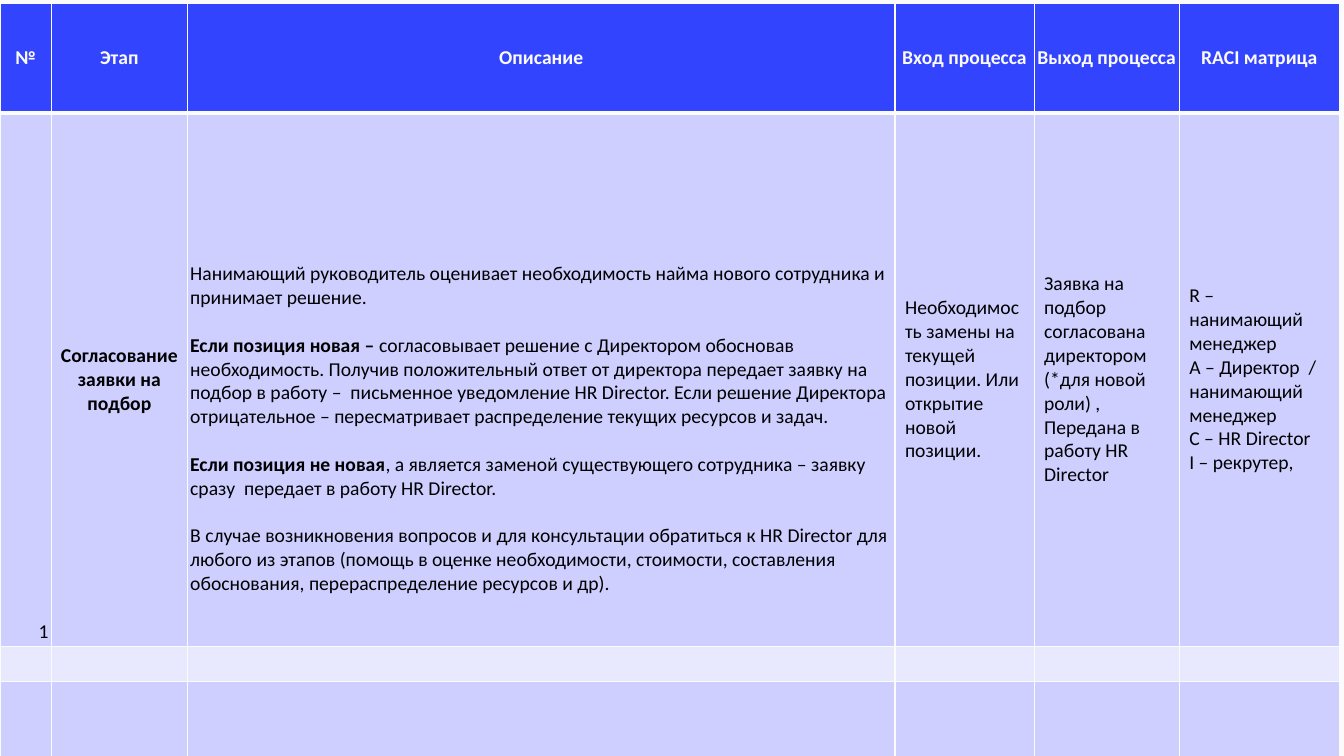
from dataclasses import dataclass

from lxml import etree
from pptx import Presentation
from pptx.dml.color import RGBColor
from pptx.enum.text import MSO_ANCHOR, PP_ALIGN
from pptx.oxml.ns import qn
from pptx.util import Pt

LEFT, CENTER, RIGHT = PP_ALIGN.LEFT, PP_ALIGN.CENTER, PP_ALIGN.RIGHT
MIDDLE, BOTTOM = MSO_ANCHOR.MIDDLE, MSO_ANCHOR.BOTTOM


@dataclass
class Theme:
    paper: str = "FBFBFB"
    ink: str = "000000"
    header: str = "3344FF"
    band: str = "CECFFF"
    light_band: str = "E8E9FF"
    font: str = "Calibri"
    size: float = 14
    thin: float = 1
    thick: float = 3


# Cell insets: left, top, right, bottom
WIDE = (7.2, 3.6, 7.2, 3.6)
TIGHT = (2, 1.5, 2, 1.5)
RAISED = (2, 1.5, 2, 36)

COLUMNS = (36.7, 97.2, 505.4, 99.4, 103.7, 114.5)
ROWS = (78.5, 380.9, 25.2, 53.3)

HEADINGS = ("№", "Этап", "Описание", "Вход процесса", "Выход процесса", "RACI матрица")

# Each paragraph is a list of (text, bold) runs
DESCRIPTION = [
    [("Нанимающий руководитель оценивает необходимость найма нового сотрудника "
      "и принимает решение.", False)],
    [("Если позиция новая – ", True),
     ("согласовывает решение с Директором обосновав необходимость. Получив "
      "положительный ответ от директора передает заявку на подбор в работу –  "
      "письменное уведомление HR Director. Если решение Директора отрицательное – "
      "пересматривает распределение текущих ресурсов и задач.", False)],
    [("Если позиция не новая", True),
     (", а является заменой существующего сотрудника – заявку сразу  передает "
      "в работу HR Director.", False)],
    [("В случае возникновения вопросов и для консультации обратиться к HR Director "
      "для любого из этапов (помощь в оценке необходимости, стоимости, составления "
      "обоснования, перераспределение ресурсов и др).", False)],
]


def plain(*lines, bold=False):
    return [[(line, bold)] for line in lines]


STAGE = (
    (plain("1"), dict(align=RIGHT, anchor=BOTTOM)),
    (plain("Согласование заявки на подбор", bold=True), dict(align=CENTER)),
    (DESCRIPTION, dict(anchor=BOTTOM, insets=RAISED, gap=17)),
    (plain("Необходимость замены на текущей позиции. Или открытие новой позиции."),
     dict(insets=WIDE)),
    (plain("Заявка на подбор согласована директором (*для новой роли) ,",
           "Передана в работу HR Director"), dict(insets=WIDE)),
    (plain("R – нанимающий менеджер", "A – Директор  / нанимающий менеджер",
           "C – HR Director", "I – рекрутер,"), dict(insets=WIDE)),
)


class SlideBuilder:
    def __init__(self, slide, theme):
        self.slide = slide
        self.theme = theme

    def background(self):
        fill = self.slide.background.fill
        fill.solid()
        fill.fore_color.rgb = RGBColor.from_string(self.theme.paper)

    def table(self, left, top, columns, rows):
        frame = self.slide.shapes.add_table(
            len(rows), len(columns), Pt(left), Pt(top), Pt(sum(columns)), Pt(sum(rows)))
        table = frame.table
        table.first_row = table.horz_banding = False
        for column, width in zip(table.columns, columns):
            column.width = Pt(width)
        for row, height in zip(table.rows, rows):
            row.height = Pt(height)
        return table

    def borders(self, cell, top, bottom):
        properties = cell._tc.get_or_add_tcPr()
        thin = self.theme.thin
        for side, width in (("L", thin), ("R", thin), ("T", top), ("B", bottom)):
            line = etree.SubElement(properties, qn(f"a:ln{side}"), w=str(Pt(width)))
            fill = etree.SubElement(line, qn("a:solidFill"))
            etree.SubElement(fill, qn("a:srgbClr"), val=self.theme.paper)

    def cell(self, cell, fill, top, bottom, insets=TIGHT, anchor=MIDDLE):
        self.borders(cell, top, bottom)
        cell.fill.solid()
        cell.fill.fore_color.rgb = RGBColor.from_string(fill)
        cell.vertical_anchor = anchor
        for side, inset in zip(("left", "top", "right", "bottom"), insets):
            setattr(cell, f"margin_{side}", Pt(inset))

    def text(self, cell, paragraphs, color, align=LEFT, gap=0):
        frame = cell.text_frame
        for index, runs in enumerate(paragraphs):
            paragraph = frame.add_paragraph() if index else frame.paragraphs[0]
            paragraph.alignment = align
            if index and gap:
                paragraph.space_before = Pt(gap)
            for words, bold in runs:
                run = paragraph.add_run()
                run.text = words
                formats = {"name": self.theme.font, "size": Pt(self.theme.size), "bold": bold}
                for name, value in formats.items():
                    setattr(run.font, name, value)
                run.font.color.rgb = RGBColor.from_string(color)


def main():
    presentation = Presentation()
    presentation.slide_width, presentation.slide_height = Pt(960), Pt(540)
    slide = presentation.slides.add_slide(presentation.slide_layouts[6])
    theme = Theme()
    builder = SlideBuilder(slide, theme)
    builder.background()
    table = builder.table(0, 2.2, COLUMNS, ROWS)

    # Header row
    for index, heading in enumerate(HEADINGS):
        cell = table.cell(0, index)
        builder.cell(cell, theme.header, theme.thin, theme.thick,
                     insets=WIDE if index < 2 else TIGHT)
        builder.text(cell, plain(heading, bold=True), theme.paper, align=CENTER)

    # First stage of the process
    for index, (paragraphs, style) in enumerate(STAGE):
        cell = table.cell(1, index)
        builder.cell(cell, theme.band, theme.thick, theme.thin,
                     insets=style.get("insets", TIGHT), anchor=style.get("anchor", MIDDLE))
        builder.text(cell, paragraphs, theme.ink,
                     align=style.get("align", LEFT), gap=style.get("gap", 0))

    # Empty rows
    for row, fill in ((2, theme.light_band), (3, theme.band)):
        for index in range(len(COLUMNS)):
            builder.cell(table.cell(row, index), fill, theme.thin, theme.thin)

    presentation.save("out.pptx")


if __name__ == "__main__":
    main()
